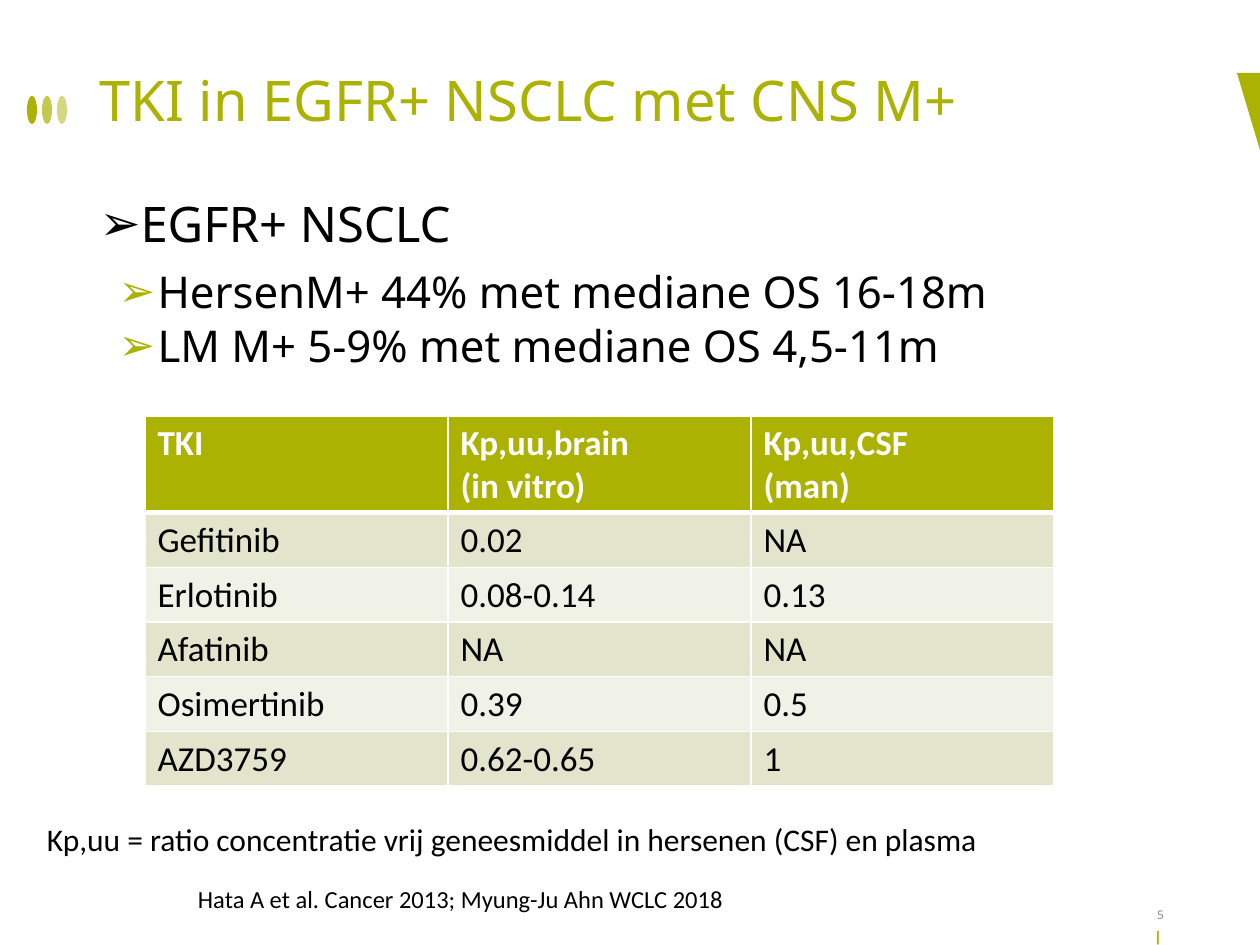
from lxml.etree import SubElement
from pptx import Presentation
from pptx.dml.color import RGBColor
from pptx.enum.shapes import MSO_SHAPE
from pptx.enum.text import MSO_ANCHOR, MSO_AUTO_SIZE, PP_ALIGN
from pptx.oxml.ns import qn
from pptx.util import Emu, Pt

EMU_PER_PX = 914400 / 126
COLORS = {
    "lime": "ABB202",
    "black": "000000",
    "white": "FFFFFF",
    "gray": "8C8C8C",
    "band_dark": "E2E4CC",
    "band_light": "F1F2E7",
}
HEADING_FONT = "Noto Sans"
TEXT_FONT = "Calibri"


def px(length):
    return Emu(round(length * EMU_PER_PX))


def color(name):
    return RGBColor.from_string(COLORS[name])


class SlideBuilder:
    def __init__(self, slide):
        self.slide = slide

    def place(self, shape, left, top, width, height):
        shape.left, shape.top = px(left), px(top)
        shape.width, shape.height = px(width), px(height)

    def add_run(self, paragraph, text, size, font, color_name, bold=False):
        run = paragraph.add_run()
        run.text = text
        run.font.size = Pt(size)
        run.font.name = font
        run.font.bold = bold
        run.font.color.rgb = color(color_name)

    def paint(self, shape, color_name, opacity=100):
        shape.shadow.inherit = False
        shape.fill.solid()
        shape.fill.fore_color.rgb = color(color_name)
        shape.line.fill.background()
        if opacity < 100:
            srgb = shape.fill._xPr.find(".//" + qn("a:srgbClr"))
            SubElement(srgb, qn("a:alpha"), val=str(opacity * 1000))

    def corner_wedge(self, start, *corners):
        builder = self.slide.shapes.build_freeform(px(start[0]), px(start[1]))
        builder.add_line_segments([(px(x), px(y)) for x, y in corners], close=True)
        self.paint(builder.convert_to_shape(), "lime")

    def fading_dots(self, left, top, width, height, pitch, opacities):
        group = self.slide.shapes.add_group_shape()
        for index, opacity in enumerate(opacities):
            dot = group.shapes.add_shape(
                MSO_SHAPE.OVAL, px(left + index * pitch), px(top), px(width), px(height))
            self.paint(dot, "lime", opacity)

    def title(self, text, box):
        title = self.slide.shapes.title
        self.place(title, *box)
        frame = title.text_frame
        frame.auto_size = MSO_AUTO_SIZE.NONE
        frame.vertical_anchor = MSO_ANCHOR.BOTTOM
        paragraph = frame.paragraphs[0]
        paragraph.alignment = PP_ALIGN.LEFT
        paragraph.line_spacing = 0.9
        self.add_run(paragraph, text, 32, HEADING_FONT, "lime")

    def bullets(self, items, box):
        """Fill the body placeholder with (level, text) items."""
        body = self.slide.placeholders[1]
        self.place(body, *box)
        frame = body.text_frame
        frame.auto_size = MSO_AUTO_SIZE.NONE
        for index, (level, text) in enumerate(items):
            paragraph = frame.add_paragraph() if index else frame.paragraphs[0]
            paragraph.level = level
            paragraph.line_spacing = 0.9
            paragraph.space_before = Pt(0)
            paragraph.space_after = Pt(3.8 if level else 9.8)
            properties = paragraph._p.get_or_add_pPr()
            properties.set("marL", str(px(58 if level else 39)))
            properties.set("indent", str(-px(39)))
            if level:
                bullet_color = SubElement(properties, qn("a:buClr"))
                SubElement(bullet_color, qn("a:srgbClr"), val=COLORS["lime"])
            SubElement(properties, qn("a:buChar"), char="➢")
            self.add_run(paragraph, text, 25 if level else 28, HEADING_FONT, "black")

    def text(self, text, box, size, font=TEXT_FONT, color_name="black",
             align=PP_ALIGN.LEFT, anchor=MSO_ANCHOR.TOP, insets=(13, 6), rotation=0):
        label = self.slide.shapes.add_textbox(*map(px, box))
        label.rotation = rotation
        frame = label.text_frame
        frame.word_wrap = True
        frame.vertical_anchor = anchor
        frame.margin_left = frame.margin_right = px(insets[0])
        frame.margin_top = frame.margin_bottom = px(insets[1])
        paragraph = frame.paragraphs[0]
        paragraph.alignment = align
        self.add_run(paragraph, text, size, font, color_name)

    def cell_borders(self, cell, top, bottom):
        properties = cell._tc.get_or_add_tcPr()
        for edge, width in (("L", 1), ("R", 1), ("T", top), ("B", bottom)):
            line = SubElement(properties, qn(f"a:ln{edge}"), w=str(Pt(width)))
            fill = SubElement(line, qn("a:solidFill"))
            SubElement(fill, qn("a:srgbClr"), val=COLORS["white"])

    def table(self, rows, box, row_height):
        """Build a banded table whose first row is the header."""
        table_frame = self.slide.shapes.add_table(len(rows), len(rows[0]), *map(px, box))
        table = table_frame.table
        for row_index, row in enumerate(rows):
            header = row_index == 0
            table.rows[row_index].height = px(row_height)
            band = "lime" if header else "band_dark" if row_index % 2 else "band_light"
            for column_index, content in enumerate(row):
                cell = table.cell(row_index, column_index)
                self.cell_borders(cell, 3 if row_index == 1 else 1, 3 if header else 1)
                cell.fill.solid()
                cell.fill.fore_color.rgb = color(band)
                for line_index, line in enumerate(content.split("\n")):
                    frame = cell.text_frame
                    paragraph = frame.add_paragraph() if line_index else frame.paragraphs[0]
                    self.add_run(paragraph, line, 20, TEXT_FONT,
                                 "white" if header else "black", bold=header)
        table_frame.height = px(box[3])


def main():
    presentation = Presentation()
    presentation.slide_width, presentation.slide_height = px(1260), px(945)
    builder = SlideBuilder(presentation.slides.add_slide(presentation.slide_layouts[1]))

    builder.corner_wedge((1237, 73), (1260, 73), (1260, 150))
    builder.fading_dots(27, 96, 10, 28, pitch=15, opacities=(100, 70, 50))
    builder.text("I", (1151, 927, 14, 25), 12, color_name="lime",
                 align=PP_ALIGN.CENTER, insets=(0, 0), rotation=180)

    builder.title("TKI in EGFR+ NSCLC met CNS M+", (87, 42, 1111, 98))
    builder.bullets([
        (0, "EGFR+ NSCLC"),
        (1, "HersenM+ 44% met mediane OS 16-18m"),
        (1, "LM M+ 5-9% met mediane OS 4,5-11m"),
    ], (87, 194, 1080, 616))

    builder.text("5", (1130, 902, 47, 25), 6.8, HEADING_FONT, "gray",
                 PP_ALIGN.RIGHT, MSO_ANCHOR.MIDDLE, insets=(13, 0))
    builder.text("Hata A et al. Cancer 2013; Myung-Ju Ahn WCLC 2018",
                 (185, 878, 915, 43), 14)
    builder.table([
        ("TKI", "Kp,uu,brain\n(in vitro)", "Kp,uu,CSF\n(man)"),
        ("Gefitinib", "0.02", "NA"),
        ("Erlotinib", "0.08-0.14", "0.13"),
        ("Afatinib", "NA", "NA"),
        ("Osimertinib", "0.39", "0.5"),
        ("AZD3759", "0.62-0.65", "1"),
    ], (145, 416, 909, 369), row_height=52)
    builder.text("Kp,uu = ratio concentratie vrij geneesmiddel in hersenen (CSF) en plasma",
                 (34, 814, 1164, 50), 18)

    presentation.save("out.pptx")


if __name__ == "__main__":
    main()
